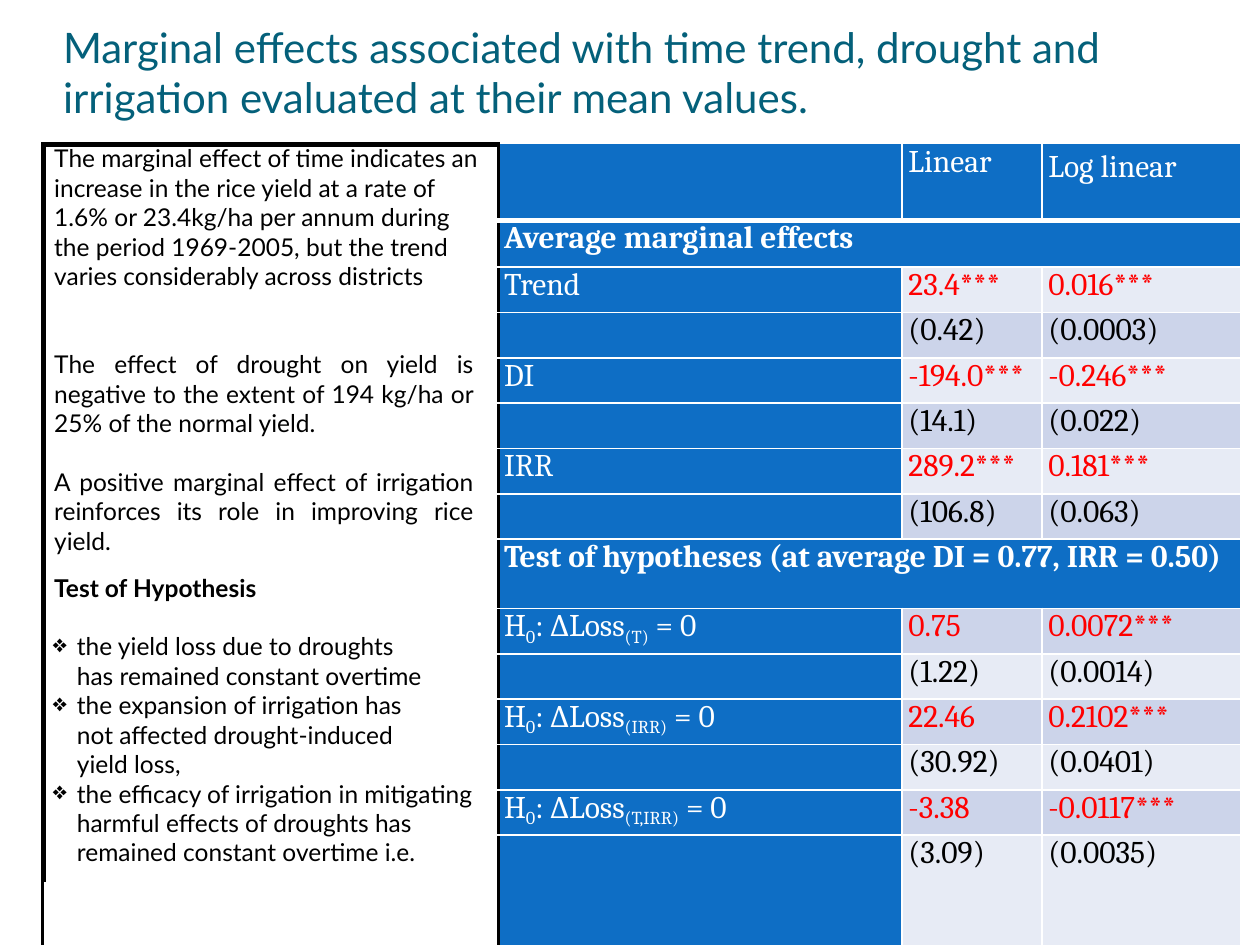
from lxml import etree
from pptx import Presentation
from pptx.dml.color import RGBColor
from pptx.enum.text import MSO_ANCHOR, MSO_AUTO_SIZE, PP_ALIGN
from pptx.oxml.ns import qn
from pptx.util import Inches, Pt

TOP = MSO_ANCHOR.TOP
NO_FIT = MSO_AUTO_SIZE.NONE
LEFT = PP_ALIGN.LEFT
JUSTIFY = PP_ALIGN.JUSTIFY

TEAL = RGBColor(0x04, 0x60, 0x7A)
BLACK = RGBColor(0, 0, 0)
WHITE = RGBColor(255, 255, 255)
RED = RGBColor(255, 0, 0)
BLUE = RGBColor(0x0E, 0x6E, 0xC5)
PALE = RGBColor(0xE7, 0xEB, 0xF5)
MID = RGBColor(0xCC, 0xD4, 0xEA)

TITLE = ("Marginal effects associated with time trend, drought and irrigation "
         "evaluated at their mean values.")
NOTES = [
    ("The marginal effect of time indicates an increase in the rice yield at a rate of "
     "1.6% or 23.4kg/ha per annum during the period 1969-2005, but the trend varies "
     "considerably across districts", dict(right=0.12)),
    ("The effect of drought on yield is negative to the extent of 194 kg/ha or 25% of "
     "the normal yield.", dict(right=0.2, align=JUSTIFY, before=33.6)),
    ("A positive marginal effect of irrigation reinforces its role in improving rice "
     "yield.", dict(right=0.2, align=JUSTIFY, before=16.8)),
    ("Test of Hypothesis", dict(bold=True, before=10)),
    ("the yield loss due to droughts has remained constant overtime",
     dict(left=0.27, right=0.56, bullet="❖", before=16.8)),
    ("the expansion of irrigation has not affected drought-induced yield loss,",
     dict(left=0.27, right=0.56, bullet="❖")),
    ("the efficacy of irrigation in mitigating harmful effects of droughts has",
     dict(left=0.27, right=0.12, bullet="❖")),
    ("remained constant overtime i.e.", dict(left=0.27)),
]
ROWS = [
    ("", "Linear", "Log linear"),
    ("Average marginal effects",),
    ("Trend", "23.4***", "0.016***"),
    ("", "(0.42)", "(0.0003)"),
    ("DI", "-194.0***", "-0.246***"),
    ("", "(14.1)", "(0.022)"),
    ("IRR", "289.2***", "0.181***"),
    ("", "(106.8)", "(0.063)"),
    ("Test of hypotheses (at average DI = 0.77, IRR = 0.50)",),
    ("H|0|: ∆Loss|(T)| = 0", "0.75", "0.0072***"),
    ("", "(1.22)", "(0.0014)"),
    ("H|0|: ∆Loss|(IRR)| = 0", "22.46", "0.2102***"),
    ("", "(30.92)", "(0.0401)"),
    ("H|0|: ∆Loss|(T,IRR)| = 0", "-3.38", "-0.0117***"),
    ("", "(3.09)", "(0.0035)"),
]
COL_WIDTHS = [3.62, 3.2, 1.11, 1.58]
SPECIAL_HEIGHTS = {0: 0.61, 1: 0.37, 8: 0.55, 14: 0.87}


def add_text(p, text, size=18, font="Cambria", color=BLACK, bold=False, align=LEFT,
             left=0.0, right=0.0, before=0, spacing=None, bullet=None):
    p.alignment = align
    p.space_before = Pt(before)
    if spacing:
        p.line_spacing = spacing
    pPr = p._p.get_or_add_pPr()
    pPr.set("marL", str(Inches(left)))
    pPr.set("marR", str(Inches(right)))
    pPr.set("indent", str(Inches(-0.19) if bullet else 0))
    if bullet:
        etree.SubElement(pPr, qn("a:buChar")).set("char", bullet)
    for i, part in enumerate(text.split("|")):
        r = p.add_run()
        r.text = part
        r.font.size = Pt(size)
        r.font.name = font
        r.font.bold = bold
        r.font.color.rgb = color
        if i % 2:
            r._r.get_or_add_rPr().set("baseline", "-20000")


def set_borders(cell, **sides):
    tcPr = cell._tc.get_or_add_tcPr()
    for i, side in enumerate("LRTB"):
        color, width = sides.get(side, (WHITE, 1))
        ln = etree.Element(qn("a:ln" + side), w=str(Pt(width)))
        fill = etree.SubElement(ln, qn("a:solidFill"))
        etree.SubElement(fill, qn("a:srgbClr")).set("val", str(color))
        tcPr.insert(i, ln)


def add_title(s):
    sp = s.shapes.title
    sp.left, sp.top, sp.width, sp.height = map(Inches, (0.49, 0.17, 9.01, 0.83))
    tf = sp.text_frame
    tf.word_wrap = True
    tf.auto_size = NO_FIT
    tf.vertical_anchor = TOP
    tf.margin_left = tf.margin_right = tf.margin_top = tf.margin_bottom = 0
    add_text(tf.paragraphs[0], TITLE, size=24, font="Lato", color=TEAL, left=0.01)


def add_notes_frame(s):
    left, right, top, bottom = map(Inches, (0.35, 3.98, 1.15, 7))
    builder = s.shapes.build_freeform(right, bottom)
    builder.add_line_segments([(right, top), (left, top), (left, bottom)], close=False)
    sp = builder.convert_to_shape()
    sp.shadow.inherit = False
    sp.fill.background()
    sp.line.color.rgb = BLACK
    sp.line.width = Pt(2)


def fill_notes(cell):
    tf = cell.text_frame
    for i, (text, style) in enumerate(NOTES):
        p = tf.add_paragraph() if i else tf.paragraphs[0]
        add_text(p, text, **{"size": 14, "font": "Lato", "left": 0.09, **style})


def fill_row(table, row, values):
    is_section = len(values) == 1
    for col, text in enumerate(values, 1):
        if not text:
            continue
        is_label = col == 1 or row == 0
        color = WHITE if is_label else BLACK if text.startswith("(") else RED
        add_text(table.cell(row, col).text_frame.paragraphs[0], text, color=color,
                 bold=is_section, left=0.04 if col == 1 else 0.05,
                 spacing=1.15 if (row, col) == (0, 3) else None)
    for col in range(1, 4):
        cell = table.cell(row, col)
        cell.fill.solid()
        is_blue = col == 1 or row == 0 or is_section
        cell.fill.fore_color.rgb = BLUE if is_blue else MID if row % 2 else PALE
        set_borders(cell,
                    L=(BLACK, 2) if col == 1 else (WHITE, 1),
                    T=(WHITE, 3 if row == 1 else 1),
                    B=(WHITE, 3 if row == 0 else 1))
    if is_section:
        table.cell(row, 1).merge(table.cell(row, 3))


def add_effects_table(s):
    heights = [SPECIAL_HEIGHTS.get(i, 0.36) for i in range(len(ROWS))]
    table = s.shapes.add_table(len(ROWS), len(COL_WIDTHS), Inches(0.34), Inches(1.14),
                               Inches(sum(COL_WIDTHS)), Inches(sum(heights))).table
    table.first_row = table.horz_banding = False
    for column, width in zip(table.columns, COL_WIDTHS):
        column.width = Inches(width)
    for row, height in zip(table.rows, heights):
        row.height = Inches(height)
    for cell in table.iter_cells():
        cell.margin_left = cell.margin_right = cell.margin_top = cell.margin_bottom = 0
    for row, values in enumerate(ROWS):
        notes = table.cell(row, 0)
        notes.fill.background()
        set_borders(notes, L=(BLACK, 2), R=(BLACK, 2), T=(BLACK, 2))
        fill_row(table, row, values)
    table.cell(0, 0).merge(table.cell(len(ROWS) - 1, 0))
    fill_notes(table.cell(0, 0))


def main():
    prs = Presentation()
    prs.slide_width, prs.slide_height = Inches(10), Inches(7.5)
    s = prs.slides.add_slide(prs.slide_layouts[5])
    add_title(s)
    add_notes_frame(s)
    add_effects_table(s)
    prs.save("out.pptx")


if __name__ == "__main__":
    main()
